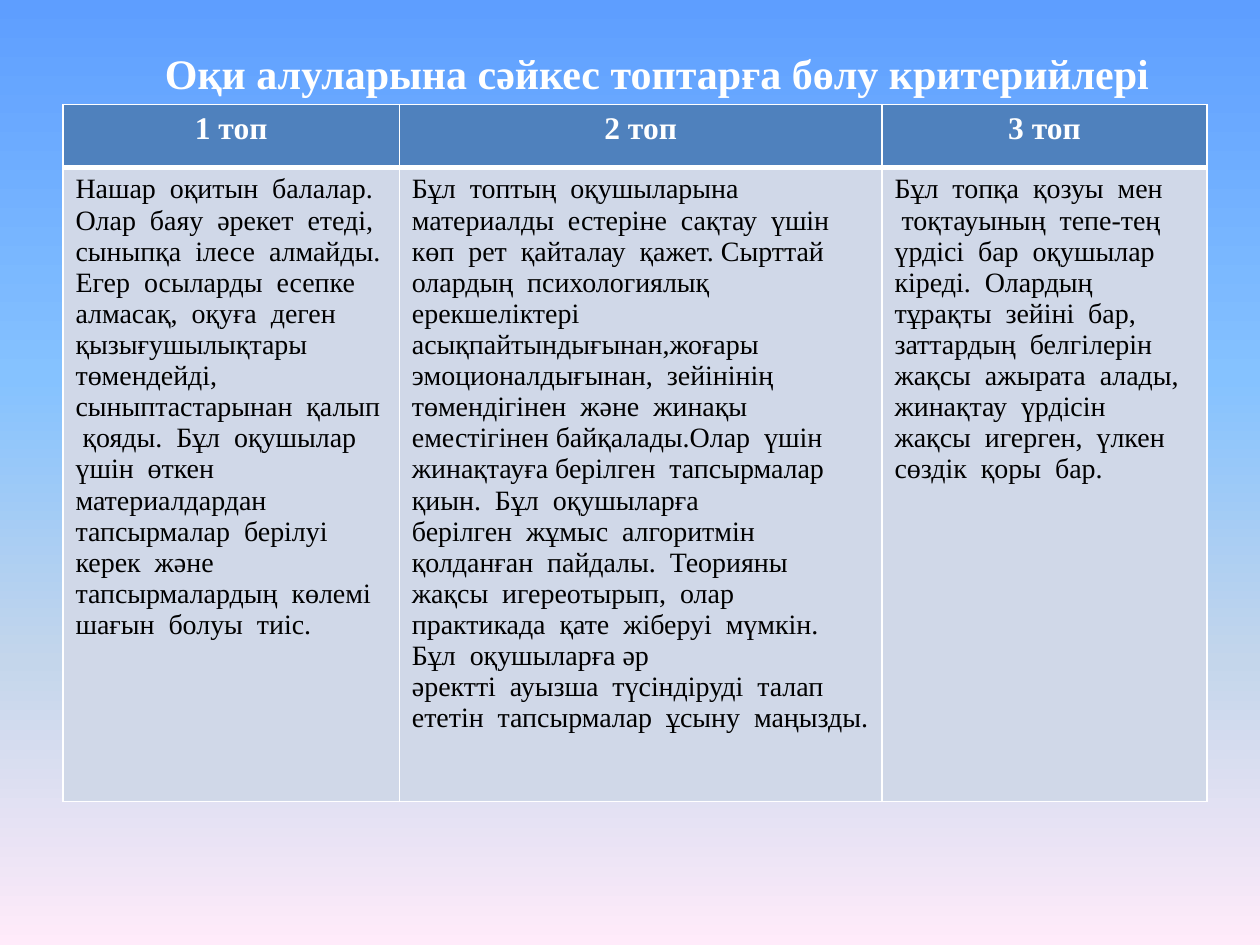
from dataclasses import dataclass

import lxml.etree
import pptx
import pptx.dml.color
import pptx.enum.text
import pptx.oxml.ns
import pptx.util

Cm = pptx.util.Cm
qn = pptx.oxml.ns.qn


@dataclass(frozen=True)
class Theme:
    font: str = "Times New Roman"
    light: str = "FFFFFF"
    dark: str = "000000"
    header_fill: str = "4F81BD"
    body_fill: str = "D0D8E8"
    sky: tuple = ((0, "5E9EFF"), (40, "85C2FF"), (70, "C4D6EB"), (100, "FFEBFA"))
    title_size: int = 24
    header_size: int = 18
    body_size: int = 16
    thin_line: int = 1
    thick_line: int = 3


THEME = Theme()
TITLE = "Оқи алуларына сәйкес топтарға бөлу критерийлері"
COLUMN_WIDTHS = (6.78, 9.73, 6.55)
ROW_HEIGHTS = (1.27, 12.78)
GROUPS = (
    ("1 топ", (
        "Нашар  оқитын  балалар. Олар  баяу  әрекет  етеді, сыныпқа  ілесе  алмайды. Егер  "
        "осыларды  есепке  алмасақ,  оқуға  деген  қызығушылықтары  төмендейді,  "
        "сыныптастарынан  қалып  қояды.  Бұл  оқушылар  үшін  өткен  материалдардан  "
        "тапсырмалар  берілуі  керек  және  тапсырмалардың  көлемі  шағын  болуы  тиіс.",
    )),
    ("2 топ", (
        "Бұл  топтың  оқушыларына материалды  естеріне  сақтау  үшін  көп  рет  қайталау  "
        "қажет. Сырттай  олардың  психологиялық  ерекшеліктері  асықпайтындығынан,жоғары  "
        "эмоционалдығынан,  зейінінің  төмендігінен  және  жинақы  еместігінен байқалады.Олар  "
        "үшін  жинақтауға берілген  тапсырмалар  қиын.  Бұл  оқушыларға ",
        "берілген  жұмыс  алгоритмін  қолданған  пайдалы.  Теорияны  жақсы  игереотырып,  олар  "
        "практикада  қате  жіберуі  мүмкін.   Бұл  оқушыларға әр ",
        "әректті  ауызша  түсіндіруді  талап ",
        "ететін  тапсырмалар  ұсыну  маңызды. ",
    )),
    ("3 топ", (
        "Бұл  топқа  қозуы  мен ",
        " тоқтауының  тепе-тең  үрдісі  бар  оқушылар  кіреді.  Олардың  тұрақты  зейіні  бар,  "
        "заттардың  белгілерін  жақсы  ажырата  алады,  жинақтау  үрдісін  жақсы  игерген,  "
        "үлкен  сөздік  қоры  бар.",
    )),
)


def rgb(value):
    return pptx.dml.color.RGBColor.from_string(value)


def write_paragraphs(text_frame, texts, size, color, bold, alignment):
    for index, text in enumerate(texts):
        paragraph = text_frame.add_paragraph() if index else text_frame.paragraphs[0]
        paragraph.alignment = alignment
        run = paragraph.add_run()
        run.text = text
        run.font.name = THEME.font
        run.font.size = pptx.util.Pt(size)
        run.font.bold = bold
        run.font.color.rgb = rgb(color)


def paint_background(slide):
    fill = slide.background.fill
    fill.gradient()
    fill.gradient_angle = 270
    stops = next(slide.element.iter(qn("a:gsLst")))
    for stop in list(stops):
        stops.remove(stop)
    for position, color in THEME.sky:
        stop = lxml.etree.SubElement(stops, qn("a:gs"), pos=str(position * 1000))
        lxml.etree.SubElement(stop, qn("a:srgbClr"), val=color)


def add_title(slide, left, top, width, height):
    title = slide.shapes.title
    title.left, title.top, title.width, title.height = left, top, width, height
    text_frame = title.text_frame
    text_frame.word_wrap = False
    text_frame.auto_size = pptx.enum.text.MSO_AUTO_SIZE.NONE
    text_frame.vertical_anchor = pptx.enum.text.MSO_ANCHOR.TOP
    write_paragraphs(text_frame, (TITLE,), THEME.title_size, THEME.light, True,
                     pptx.enum.text.PP_ALIGN.CENTER)


def set_borders(cell, top, bottom):
    properties = cell._tc.get_or_add_tcPr()
    widths = {"L": THEME.thin_line, "R": THEME.thin_line, "T": top, "B": bottom}
    for index, (side, width) in enumerate(widths.items()):
        line = lxml.etree.Element(qn(f"a:ln{side}"), w=str(pptx.util.Pt(width)))
        fill = lxml.etree.SubElement(line, qn("a:solidFill"))
        lxml.etree.SubElement(fill, qn("a:srgbClr"), val=THEME.light)
        properties.insert(index, line)


def fill_cell(cell, color):
    cell.fill.solid()
    cell.fill.fore_color.rgb = rgb(color)


def add_groups_table(slide, left, top, width, height):
    table = slide.shapes.add_table(
        len(ROW_HEIGHTS), len(GROUPS), left, top, width, height).table
    table.horz_banding = False
    for row, row_height in zip(table.rows, ROW_HEIGHTS):
        row.height = Cm(row_height)
    for index, (heading, texts) in enumerate(GROUPS):
        table.columns[index].width = Cm(COLUMN_WIDTHS[index])
        header, body = table.cell(0, index), table.cell(1, index)
        fill_cell(header, THEME.header_fill)
        fill_cell(body, THEME.body_fill)
        set_borders(header, THEME.thin_line, THEME.thick_line)
        set_borders(body, THEME.thick_line, THEME.thin_line)
        write_paragraphs(header.text_frame, (heading,), THEME.header_size, THEME.light, True,
                         pptx.enum.text.PP_ALIGN.CENTER)
        write_paragraphs(body.text_frame, texts, THEME.body_size, THEME.dark, False,
                         pptx.enum.text.PP_ALIGN.LEFT)


def main():
    presentation = pptx.Presentation()
    presentation.slide_width, presentation.slide_height = Cm(25.4), Cm(19.05)
    slide = presentation.slides.add_slide(presentation.slide_layouts.get_by_name("Title Only"))
    paint_background(slide)
    add_title(slide, Cm(2.97), Cm(0.84), Cm(20.55), Cm(1.27))
    add_groups_table(slide, Cm(1.27), Cm(2.11), Cm(sum(COLUMN_WIDTHS)), Cm(sum(ROW_HEIGHTS)))
    presentation.save("out.pptx")


if __name__ == "__main__":
    main()
